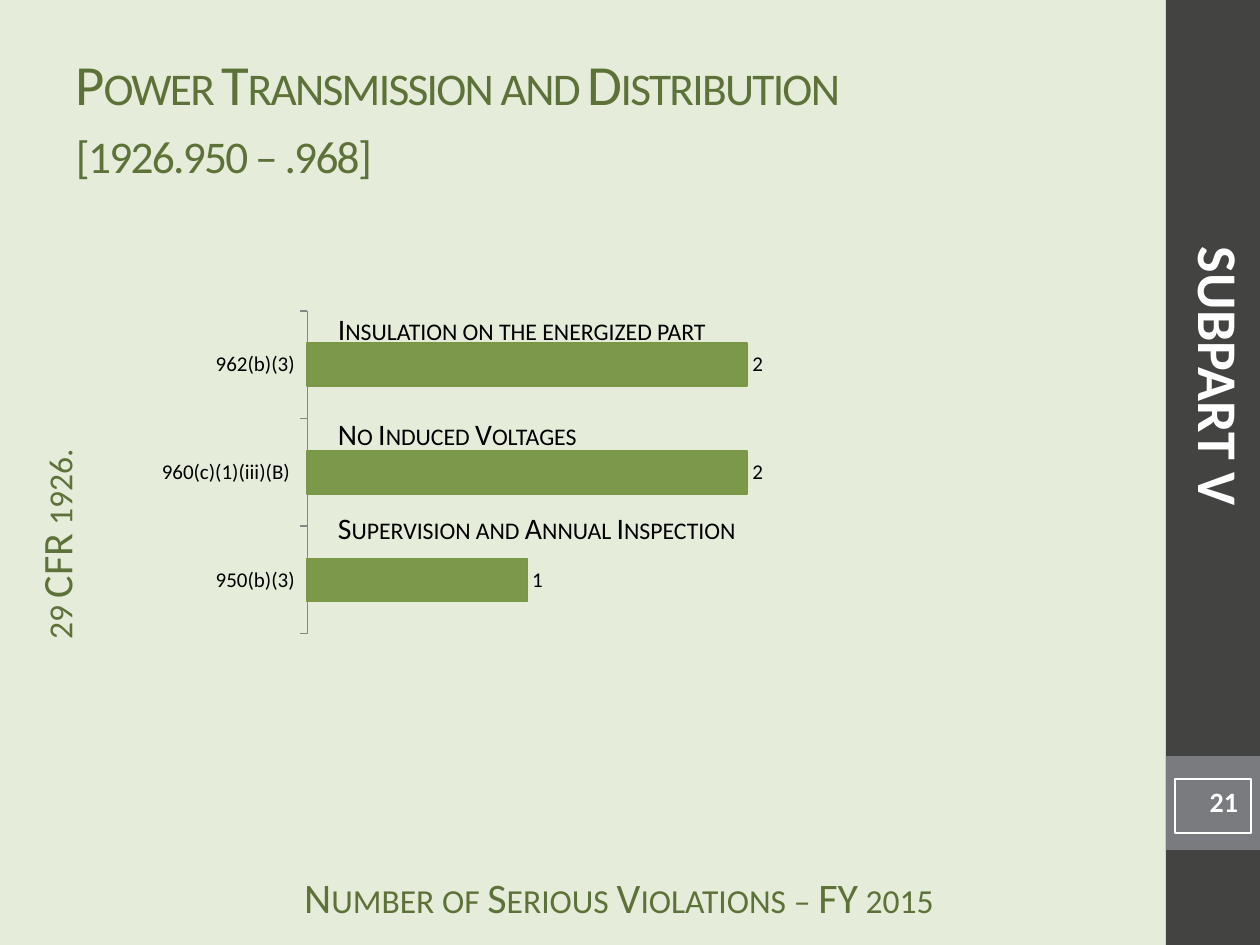
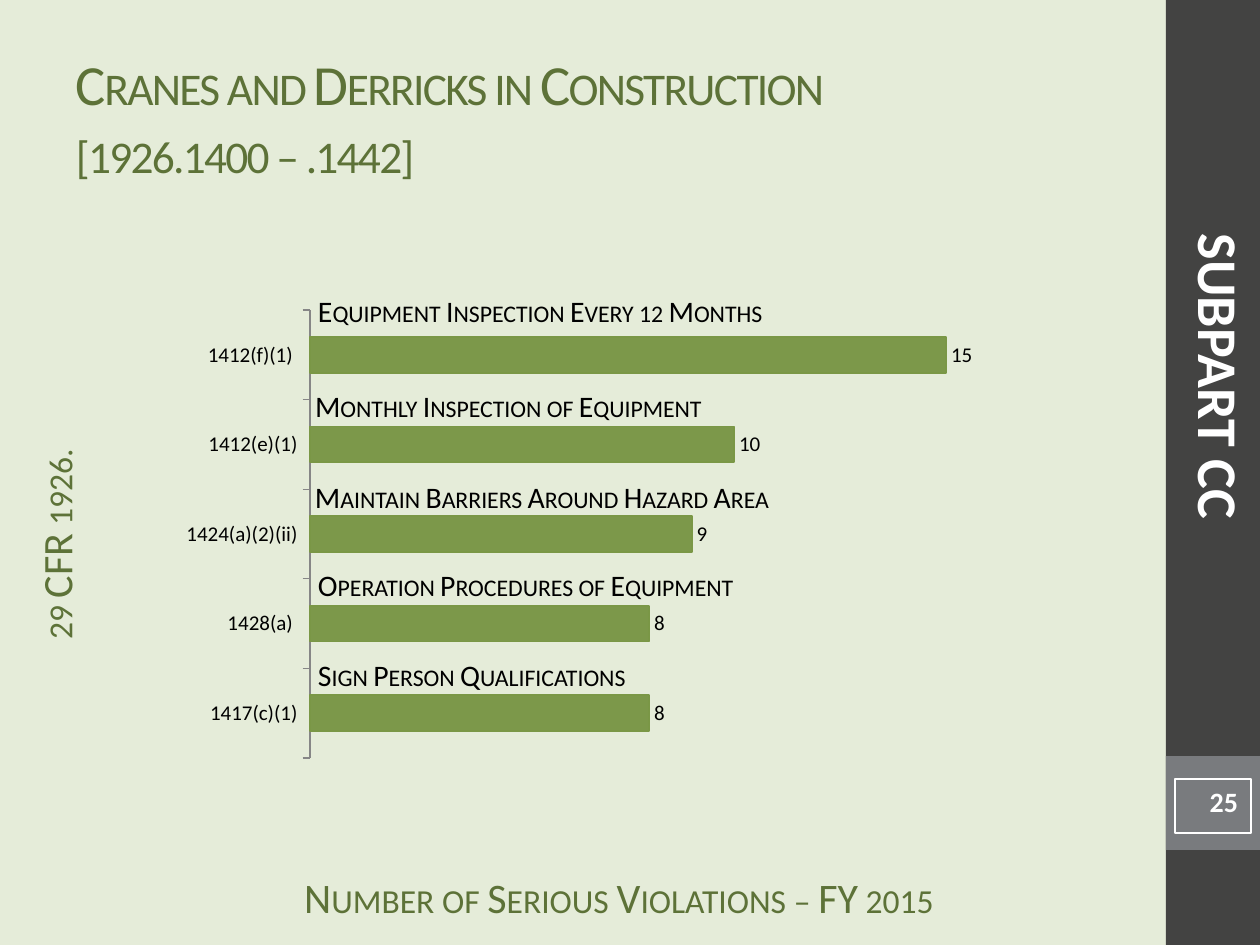
from pptx import Presentation
from pptx import util as u
from pptx.chart import data
from pptx.dml import color
from pptx.enum import chart as charts, shapes, text
from pptx.oxml import parse_xml
from pptx.oxml.ns import nsdecls

PX_PER_INCH = 126
FONT = "Calibri"
PALE_GREEN = color.RGBColor(0xE5, 0xEC, 0xD9)
DARK_GREEN = color.RGBColor(0x5D, 0x72, 0x38)
BAR_GREEN = color.RGBColor(0x7C, 0x98, 0x4A)
BAR_EDGE = color.RGBColor(0x7A, 0x97, 0x46)
CHARCOAL = color.RGBColor(0x43, 0x43, 0x42)
GRAY = color.RGBColor(0x79, 0x7B, 0x7E)
AXIS_GRAY = color.RGBColor(0x86, 0x86, 0x86)
WHITE = color.RGBColor(0xFF, 0xFF, 0xFF)
BLACK = color.RGBColor(0, 0, 0)
LEFT, CENTER, RIGHT = text.PP_ALIGN.LEFT, text.PP_ALIGN.CENTER, text.PP_ALIGN.RIGHT
DEFAULT_INSETS = (13, 6, 13, 6)
SIDE_INSETS = (13, 0, 13, 6)
NO_INSETS = (0, 0, 0, 0)


def px(length):
    return u.Emu(round(length * 914400 / PX_PER_INCH))


def write(frame, wording, size, ink, bold=False, align=LEFT, small_caps=False,
          spacing=None, insets=DEFAULT_INSETS, anchor=text.MSO_ANCHOR.TOP):
    frame.word_wrap = True
    frame.vertical_anchor = anchor
    (frame.margin_left, frame.margin_top,
     frame.margin_right, frame.margin_bottom) = map(px, insets)
    paragraph = frame.paragraphs[0]
    paragraph.text = wording
    paragraph.alignment = align
    for run in paragraph.runs:
        run.font.name = FONT
        run.font.size = u.Pt(size)
        run.font.bold = bold
        run.font.color.rgb = ink
        properties = run.font._element
        if small_caps:
            properties.set("cap", "small")
        if spacing is not None:
            properties.set("spc", str(spacing))


class Deck:
    def __init__(self):
        self.presentation = Presentation()
        self.presentation.slide_width = px(1260)
        self.presentation.slide_height = px(945)
        self.slide = None

    def new_slide(self):
        self.slide = self.presentation.slides.add_slide(self.presentation.slide_layouts[6])
        background = self.slide.background.fill
        background.solid()
        background.fore_color.rgb = PALE_GREEN

    def rectangle(self, box, fill=None, line=None):
        shape = self.slide.shapes.add_shape(shapes.MSO_SHAPE.RECTANGLE, *map(px, box))
        shape.shadow.inherit = False
        if fill is None:
            shape.fill.background()
        else:
            shape.fill.solid()
            shape.fill.fore_color.rgb = fill
        if line is None:
            shape.line.fill.background()
        else:
            shape.line.color.rgb = line
            shape.line.width = u.Pt(1.5)
        return shape

    def text(self, box, wording, size, ink, rotation=0, **style):
        shape = self.slide.shapes.add_textbox(*map(px, box))
        shape.rotation = rotation
        write(shape.text_frame, wording, size, ink, **style)

    def frame(self, title, subpart, number):
        self.new_slide()
        self.rectangle((1166, 0, 94, 945), CHARCOAL)
        self.rectangle((1166, 756, 94, 94), GRAY)
        self.text((262, 872, 714, 42), "Number of Serious Violations – FY 2015", 24, DARK_GREEN,
                  align=CENTER, small_caps=True, insets=SIDE_INSETS)
        self.text((-197, 508, 528, 73), "29 CFR 1926.", 24, DARK_GREEN, rotation=270,
                  align=CENTER, small_caps=True, insets=SIDE_INSETS)
        self.text((63, 38, 1050, 158), title, 32.4, DARK_GREEN, small_caps=True,
                  spacing=-100, anchor=text.MSO_ANCHOR.MIDDLE)
        self.text((843, 336, 753, 81), subpart, 32, WHITE, rotation=90,
                  bold=True, align=CENTER)
        page_box = self.rectangle((1175, 779, 76, 54), line=WHITE)
        write(page_box.text_frame, number, 16, WHITE, bold=True, align=RIGHT)

    def bar_chart(self, box, plot_box, violations, maximum):
        chart_data = data.CategoryChartData()
        chart_data.categories = list(violations)
        chart_data.add_series("Series 1", list(violations.values()))
        chart = self.slide.shapes.add_chart(
            charts.XL_CHART_TYPE.BAR_CLUSTERED, *map(px, box), chart_data).chart
        chart.has_legend = False
        chart.has_title = False
        chart.font.name = FONT
        chart.font.size = u.Pt(10)
        chart.font.color.rgb = BLACK

        category_axis = chart.category_axis
        category_axis.major_tick_mark = charts.XL_TICK_MARK.OUTSIDE
        category_axis.tick_labels.font.size = u.Pt(12)
        category_axis.format.line.color.rgb = AXIS_GRAY
        value_axis = chart.value_axis
        value_axis.minimum_scale = 0
        value_axis.maximum_scale = maximum
        value_axis.has_major_gridlines = False
        value_axis.visible = False

        plot = chart.plots[0]
        plot.gap_width = 150
        plot.vary_by_categories = False
        plot.has_data_labels = True
        labels = plot.data_labels
        labels.show_value = True
        labels.position = charts.XL_LABEL_POSITION.OUTSIDE_END
        labels.font.size = u.Pt(12)
        bars = plot.series[0].format
        bars.fill.solid()
        bars.fill.fore_color.rgb = BAR_GREEN
        bars.line.color.rgb = BAR_EDGE
        bars.line.width = u.Pt(1)
        self.place_plot(chart, box, plot_box)

    def place_plot(self, chart, box, plot_box):
        left, top, width, height = box
        plot_left, plot_top, plot_width, plot_height = plot_box
        fractions = {"x": (plot_left - left) / width, "y": (plot_top - top) / height,
                     "w": plot_width / width, "h": plot_height / height}
        modes = "".join(f'<c:{side}Mode val="edge"/>' for side in "xy")
        sizes = "".join(f'<c:{key} val="{value:.3f}"/>' for key, value in fractions.items())
        layout = parse_xml(
            f'<c:layout {nsdecls("c")}><c:manualLayout><c:layoutTarget val="inner"/>'
            f'{modes}{sizes}</c:manualLayout></c:layout>')
        plot_area = chart._chartSpace.chart.plotArea
        for old_layout in plot_area.findall(layout.tag):
            plot_area.remove(old_layout)
        plot_area.insert(0, layout)

    def bar_caption(self, box, wording, insets=DEFAULT_INSETS):
        self.text(box, wording, 17, BLACK, small_caps=True, insets=insets)


def power_transmission(deck):
    deck.frame("Power Transmission and Distribution\v[1926.950 – .968]", "SUBPART V", "21")
    deck.bar_chart((147, 305, 725, 336), (307, 311, 550, 323),
                   {"950(b)(3)": 1, "960(c)(1)(iii)(B) ": 2, "962(b)(3)": 2}, 2.5)
    for top, caption in ((305, "Insulation on the energized part"),
                         (410, "No Induced Voltages"),
                         (504, "Supervision and Annual Inspection")):
        deck.bar_caption((325, top, 451, 49), caption)


def cranes_and_derricks(deck):
    deck.frame("Cranes and Derricks in Construction\v[1926.1400 – .1442]", "SUBPART CC", "25")
    deck.bar_chart((168, 291, 840, 532), (310, 310, 679, 448),
                   {"1417(c)(1)": 8, "1428(a) ": 8, "1424(a)(2)(ii)": 9,
                    "1412(e)(1)": 10, "1412(f)(1) ": 15}, 16)
    deck.bar_caption((305, 287, 483, 49), "Equipment Inspection Every 12 Months")
    deck.bar_caption((315, 388, 462, 33), "Monthly Inspection of Equipment", NO_INSETS)
    deck.bar_caption((315, 479, 683, 37), "Maintain Barriers Around Hazard Area", NO_INSETS)
    deck.bar_caption((305, 561, 640, 49), "Operation Procedures of Equipment")
    deck.bar_caption((305, 651, 360, 49), "Sign Person Qualifications")


def main():
    deck = Deck()
    power_transmission(deck)
    cranes_and_derricks(deck)
    deck.presentation.save("out.pptx")


if __name__ == "__main__":
    main()
